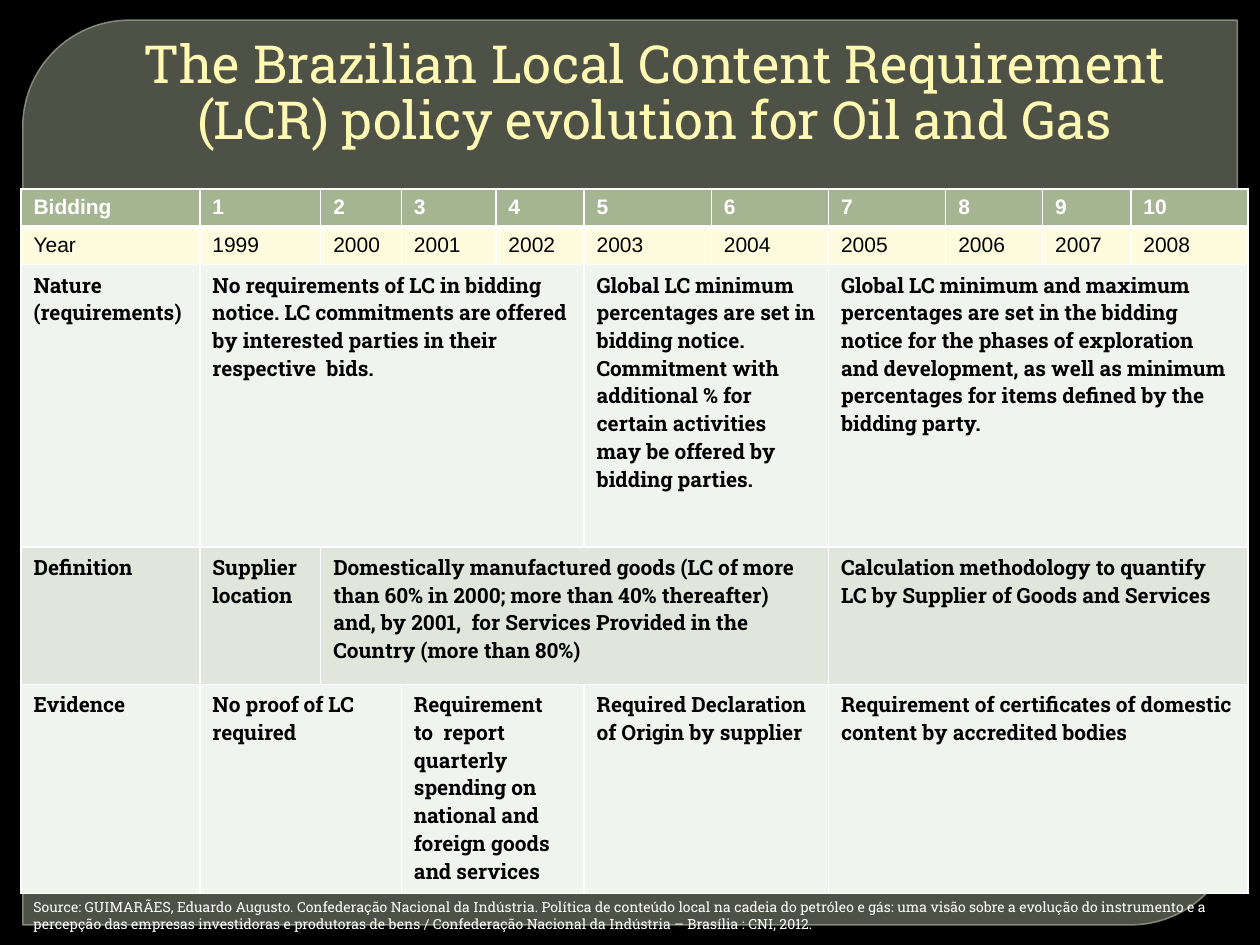
import lxml.etree
import pptx
import pptx.dml.color
import pptx.enum.shapes
import pptx.enum.text
import pptx.oxml.ns
import pptx.util

Pt = pptx.util.Pt
qn = pptx.oxml.ns.qn
SLAB = "Roboto Slab"
COLUMNS = [102.2, 69.1, 46.1, 54, 50.4, 72.7, 67, 67, 55.4, 50.4, 67]
ROWS = [21.6, 21.6, 161.3, 78.5, 119.5]
HEADER = {"fill": "A5B592", "font": "Arial", "color": "FFFFFF", "bold": True}
YEARS = {"fill": "FEFCDF", "font": "Arial", "color": "000000", "bold": False}
LIGHT = {"fill": "F0F3EE", "font": SLAB, "color": "000000", "bold": True}
DARK = {**LIGHT, "fill": "E1E5DC"}
TABLE = [
    (HEADER, [("Bidding", 1)] + [(str(number), 1) for number in range(1, 11)]),
    (YEARS, [("Year", 1)] + [(str(year), 1) for year in range(1999, 2009)]),
    (LIGHT, [
        ("Nature (requirements)", 1),
        ("No requirements of LC in bidding notice. LC commitments are offered "
         "by interested parties in their respective  bids.", 4),
        ("Global LC minimum percentages are set in bidding notice. Commitment with "
         "additional % for certain activities may be offered by bidding parties.", 2),
        ("Global LC minimum and maximum percentages are set in the bidding notice for "
         "the phases of exploration and development, as well as minimum percentages "
         "for items defined by the  bidding party.", 4),
    ]),
    (DARK, [
        ("Definition", 1),
        ("Supplier location", 1),
        ("Domestically manufactured goods (LC of more than 60% in 2000; more than 40% "
         "thereafter) and, by 2001,  for Services Provided in the Country "
         "(more than 80%)", 5),
        ("Calculation methodology to quantify LC by Supplier of Goods and Services", 4),
    ]),
    (LIGHT, [
        ("Evidence", 1),
        ("No proof of LC required", 2),
        ("Requirement  to  report quarterly   spending on national and foreign goods "
         "and services", 2),
        ("Required Declaration of Origin by supplier", 2),
        ("Requirement of certificates of domestic content by accredited bodies", 4),
    ]),
]
TITLE = "The Brazilian Local Content Requirement (LCR) policy evolution for Oil and Gas"
SOURCE = (
    "Source: GUIMARÃES, Eduardo Augusto. Confederação Nacional da Indústria. Política de "
    "conteúdo local na cadeia do petróleo e gás: uma visão sobre a evolução do instrumento "
    "e a percepção das empresas investidoras e produtoras de bens / Confederação Nacional "
    "da Indústria – Brasília : CNI, 2012."
)


def rgb(color):
    """Return the colour object for a hex string."""
    return pptx.dml.color.RGBColor.from_string(color)


def paint(fill, color, opacity=100):
    """Fill with a solid colour at the given opacity in percent."""
    fill.solid()
    fill.fore_color.rgb = rgb(color)
    if opacity < 100:
        element = fill._xPr.find(qn("a:solidFill"))[0]
        lxml.etree.SubElement(element, qn("a:alpha"), val=str(opacity * 1000))


def add_run(paragraph, text, size, font, color, bold=False):
    """Append a formatted run to a paragraph."""
    run = paragraph.add_run()
    run.text = text
    run.font.size = Pt(size)
    run.font.name = font
    run.font.bold = bold
    run.font.color.rgb = rgb(color)


def add_borders(cell, top, bottom):
    """Give a cell white borders, with top and bottom widths in points."""
    properties = cell._tc.get_or_add_tcPr()
    for side, width in (("L", 1), ("R", 1), ("T", top), ("B", bottom)):
        line = lxml.etree.SubElement(properties, qn("a:ln" + side), w=str(Pt(width)))
        solid = lxml.etree.SubElement(line, qn("a:solidFill"))
        lxml.etree.SubElement(solid, qn("a:srgbClr"), val="FFFFFF")


def add_backdrop(slide, left, top, width, height):
    """Place the translucent panel with two rounded corners."""
    panel = slide.shapes.add_shape(
        pptx.enum.shapes.MSO_SHAPE.ROUND_2_DIAG_RECTANGLE,
        Pt(left), Pt(top), Pt(width), Pt(height))
    panel.adjustments[0] = 0.118
    panel.shadow.inherit = False
    paint(panel.fill, "787D6B", 65)
    paint(panel.line.fill, "8F9483", 88)
    panel.line.width = Pt(0.87)


def add_text(slide, left, top, width, height, text, size, color):
    """Place a wrapped text box and return its frame."""
    box = slide.shapes.add_textbox(Pt(left), Pt(top), Pt(width), Pt(height))
    frame = box.text_frame
    frame.word_wrap = True
    add_run(frame.paragraphs[0], text, size, SLAB, color)
    return frame


def add_title(slide, left, top, width, height):
    """Place the centred title at the bottom of its box."""
    frame = add_text(slide, left, top, width, height, TITLE, 30, "FFF9B4")
    frame.vertical_anchor = pptx.enum.text.MSO_ANCHOR.BOTTOM
    frame.margin_left = Pt(11.5)
    frame.paragraphs[0].alignment = pptx.enum.text.PP_ALIGN.CENTER
    frame.paragraphs[0].line_spacing = 0.9


def add_policy_table(slide, left, top):
    """Place the table of bidding rounds with its merged cells."""
    table = slide.shapes.add_table(
        len(ROWS), len(COLUMNS), Pt(left), Pt(top), Pt(sum(COLUMNS)), Pt(sum(ROWS))).table
    for column, width in zip(table.columns, COLUMNS):
        column.width = Pt(width)
    for index, (style, entries) in enumerate(TABLE):
        table.rows[index].height = Pt(ROWS[index])
        for cell in table.rows[index].cells:
            add_borders(cell, 3 if index == 1 else 1, 3 if index == 0 else 1)
            paint(cell.fill, style["fill"])
        start = 0
        for text, span in entries:
            cell = table.cell(index, start)
            if span > 1:
                cell.merge(table.cell(index, start + span - 1))
            add_run(cell.text_frame.paragraphs[0], text, 12,
                    style["font"], style["color"], style["bold"])
            start += span


def main():
    """Build and save the slide."""
    presentation = pptx.Presentation()
    presentation.slide_width = Pt(720)
    presentation.slide_height = Pt(540)
    slide = presentation.slides.add_slide(presentation.slide_layouts[6])
    paint(slide.background.fill, "000000")
    add_backdrop(slide, 13, 11.5, 694, 517)
    add_title(slide, 48, 0, 648, 90)
    add_policy_table(slide, 12, 108)
    add_text(slide, 12, 510, 708, 41, SOURCE, 8, "FFFFFF")
    presentation.save("out.pptx")


if __name__ == "__main__":
    main()
